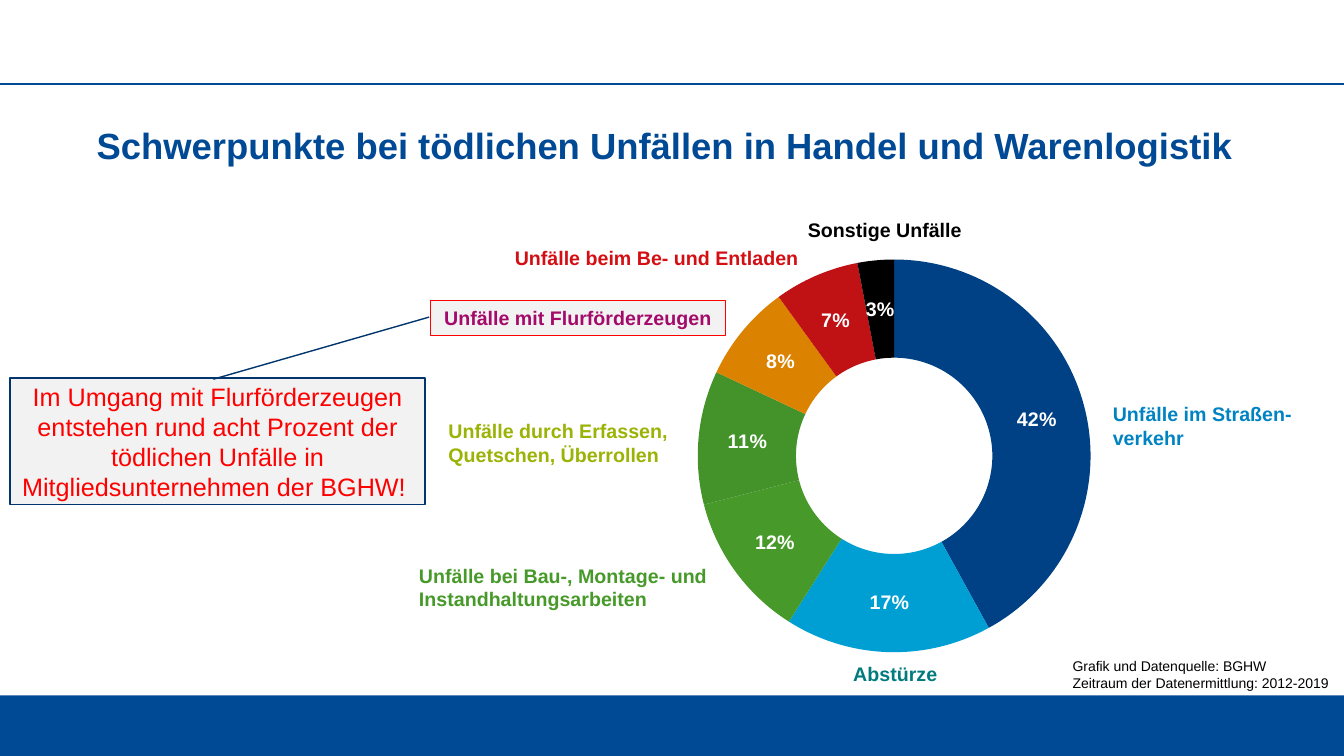
from dataclasses import dataclass

from lxml import etree
from pptx import Presentation
from pptx.chart.data import CategoryChartData
from pptx.dml.color import RGBColor
from pptx.enum.chart import XL_CHART_TYPE as CHART
from pptx.enum.shapes import MSO_CONNECTOR as CONN, MSO_SHAPE as SHAPE
from pptx.enum.text import MSO_ANCHOR as ANCHOR, MSO_AUTO_SIZE as AUTO, PP_ALIGN as ALIGN
from pptx.oxml import parse_xml
from pptx.oxml.ns import nsdecls, qn
from pptx.util import Inches, Pt


@dataclass(frozen=True)
class Theme:
    font: str = "Arial"
    title: int = 26
    callout: int = 18
    label: int = 14
    source: int = 10
    blue: str = "004994"
    navy: str = "00366D"
    panel: str = "F2F2F2"
    red: str = "FF0000"
    black: str = "000000"
    white: str = "FFFFFF"
    purple: str = "A30A6A"
    traffic: str = "0083C2"
    falls: str = "007B7D"
    building: str = "479A2A"
    crushing: str = "9BB305"
    loading: str = "D40F14"
    slices: tuple = ("004185", "009FD3", "479A2A", "44922A", "DB8300", "C01115", "000000")


class SlideBuilder:
    """Places elements on a grid of 16 columns by 9 rows."""
    COLS, ROWS = 16, 9

    def __init__(self, prs, theme):
        self.theme = theme
        self.col, self.row = prs.slide_width / self.COLS, prs.slide_height / self.ROWS
        self.shapes = prs.slides.add_slide(prs.slide_layouts[6]).shapes

    def place(self, x, y, w, h):
        return [int(n * unit) for n, unit in zip((x, y, w, h), (self.col, self.row) * 2)]

    def fill_text(self, s, lines, size, color, bold=False, align=ALIGN.LEFT,
                  anchor=ANCHOR.TOP, spacing=None, margin=None):
        tf = s.text_frame
        tf.word_wrap, tf.vertical_anchor = True, anchor
        if margin is not None:
            tf.margin_left = tf.margin_top = tf.margin_right = tf.margin_bottom = Inches(margin)
        for i, line in enumerate(lines):
            p = tf.add_paragraph() if i else tf.paragraphs[0]
            p.add_run().text = line
            p.alignment, p.line_spacing = align, spacing
            p.font.name, p.font.size, p.font.bold = self.theme.font, Pt(size), bold
            p.font.color.rgb = RGBColor.from_string(color)

    def text(self, box, lines, size, color, grow=True, **style):
        s = self.shapes.add_textbox(*self.place(*box))
        self.fill_text(s, lines, size, color, **style)
        s.text_frame.auto_size = AUTO.SHAPE_TO_FIT_TEXT if grow else AUTO.NONE

    def shape(self, kind, box, fill, line=None, width=1):
        s = self.shapes.add_shape(kind, *self.place(*box))
        s.shadow.inherit = False
        s.fill.solid()
        s.fill.fore_color.rgb = RGBColor.from_string(fill)
        if line:
            s.line.color.rgb = RGBColor.from_string(line)
            s.line.width = Pt(width)
        else:
            s.line.fill.background()
        return s

    def rule(self, y, color, width):
        x1, y1, x2, y2 = self.place(0, y, self.COLS, y)
        s = self.shapes.add_connector(CONN.STRAIGHT, x1, y1, x2, y2)
        s.line.color.rgb = RGBColor.from_string(color)
        s.line.width = Pt(width)
        etree.SubElement(s._element.spPr, qn("a:effectLst"))

    def doughnut(self, box, values, layout):
        t = self.theme
        data = CategoryChartData()
        data.categories = [str(i + 1) for i in range(len(values))]
        data.add_series("Series 1", values)
        chart = self.shapes.add_chart(CHART.DOUGHNUT, *self.place(*box), data).chart
        chart.has_legend = chart.has_title = False
        chart.font.name, chart.font.size = t.font, Pt(t.callout)
        plot = chart.plots[0]
        plot.vary_by_categories = True
        series = plot.series[0]
        for i, color in enumerate(t.slices):
            fmt = series.points[i].format
            fmt.fill.solid()
            fmt.fill.fore_color.rgb = RGBColor.from_string(color)
            fmt.line.fill.background()
        labels = series.data_labels
        labels.show_percentage, labels.show_value = True, False
        labels.number_format, labels.number_format_is_linked = "0%", False
        labels.font.name, labels.font.size, labels.font.bold = t.font, Pt(t.label), True
        labels.font.color.rgb = RGBColor.from_string(t.white)
        # Fixed inner plot area
        area = chart._chartSpace.chart.plotArea
        for old in area.findall(qn("c:layout")):
            area.remove(old)
        modes = "".join(f'<c:{n} val="{v}"/>' for n, v in
                        (("layoutTarget", "inner"), ("xMode", "edge"), ("yMode", "edge")))
        sizes = "".join(f'<c:{n} val="{v}"/>' for n, v in zip("xywh", layout))
        area.insert(0, parse_xml(f'<c:layout {nsdecls("c")}><c:manualLayout>{modes}{sizes}'
                                 '</c:manualLayout></c:layout>'))


def main():
    t = Theme()
    prs = Presentation()
    prs.slide_width, prs.slide_height = Inches(13.33), Inches(7.5)
    s = SlideBuilder(prs, t)

    # Frame and title
    s.shape(SHAPE.RECTANGLE, (0, 8.28, 16, 0.72), t.blue)
    s.rule(1, t.blue, 2)
    s.text((1.15, 1.52, 13.7, 0.68),
           ["Schwerpunkte bei tödlichen Unfällen in Handel und Warenlogistik"],
           t.title, t.blue, grow=False, bold=True, spacing=0.9, margin=0)

    # Shares of fatal accidents
    s.doughnut((7.12, 2.99, 6.98, 4.78), (42, 17, 12, 11, 8, 7, 3), (0.17, 0.02, 0.67, 0.98))

    # Highlighted share with its callout
    tag = s.shape(SHAPE.RECTANGLE, (5.12, 3.58, 3.52, 0.41), t.panel, t.red, 0.75)
    s.fill_text(tag, ["Unfälle mit Flurförderzeugen"], t.label, t.purple, bold=True,
                align=ALIGN.CENTER)
    callout = s.shape(SHAPE.LINE_CALLOUT_1, (0.12, 4.5, 4.94, 1.51), t.panel, t.navy)
    for i, share in enumerate((0.01, 0.49, -0.48, 1.01)):
        callout.adjustments[i] = share
    s.fill_text(callout, ["Im Umgang mit Flurförderzeugen entstehen rund acht Prozent der "
                          "tödlichen Unfälle in Mitgliedsunternehmen der BGHW! "],
                t.callout, t.red, align=ALIGN.CENTER, anchor=ANCHOR.MIDDLE)

    # Labels around the ring
    one, two = 0.41, 0.68
    for x, y, w, h, color, lines in (
        (13.13, 4.73, 2.6, two, t.traffic, ["Unfälle im Straßen-", "verkehr"]),
        (10.04, 7.82, 1.48, one, t.falls, ["Abstürze"]),
        (4.87, 6.65, 4.01, two, t.building,
         ["Unfälle bei Bau-, Montage- und Instandhaltungsarbeiten"]),
        (5.22, 4.93, 3.02, two, t.crushing, ["Unfälle durch Erfassen, Quetschen, Überrollen"]),
        (6.01, 2.87, 3.66, one, t.loading, ["Unfälle beim Be- und Entladen"]),
        (9.5, 2.54, 2.2, one, t.black, ["Sonstige Unfälle"]),
    ):
        s.text((x, y, w, h), lines, t.label, color, bold=True)

    # Source note
    s.text((12.72, 7.78, 3.3, 0.5),
           ["Grafik und Datenquelle: BGHW", "Zeitraum der Datenermittlung: 2012-2019"],
           t.source, t.black, margin=0.04)

    prs.save("out.pptx")


if __name__ == "__main__":
    main()
